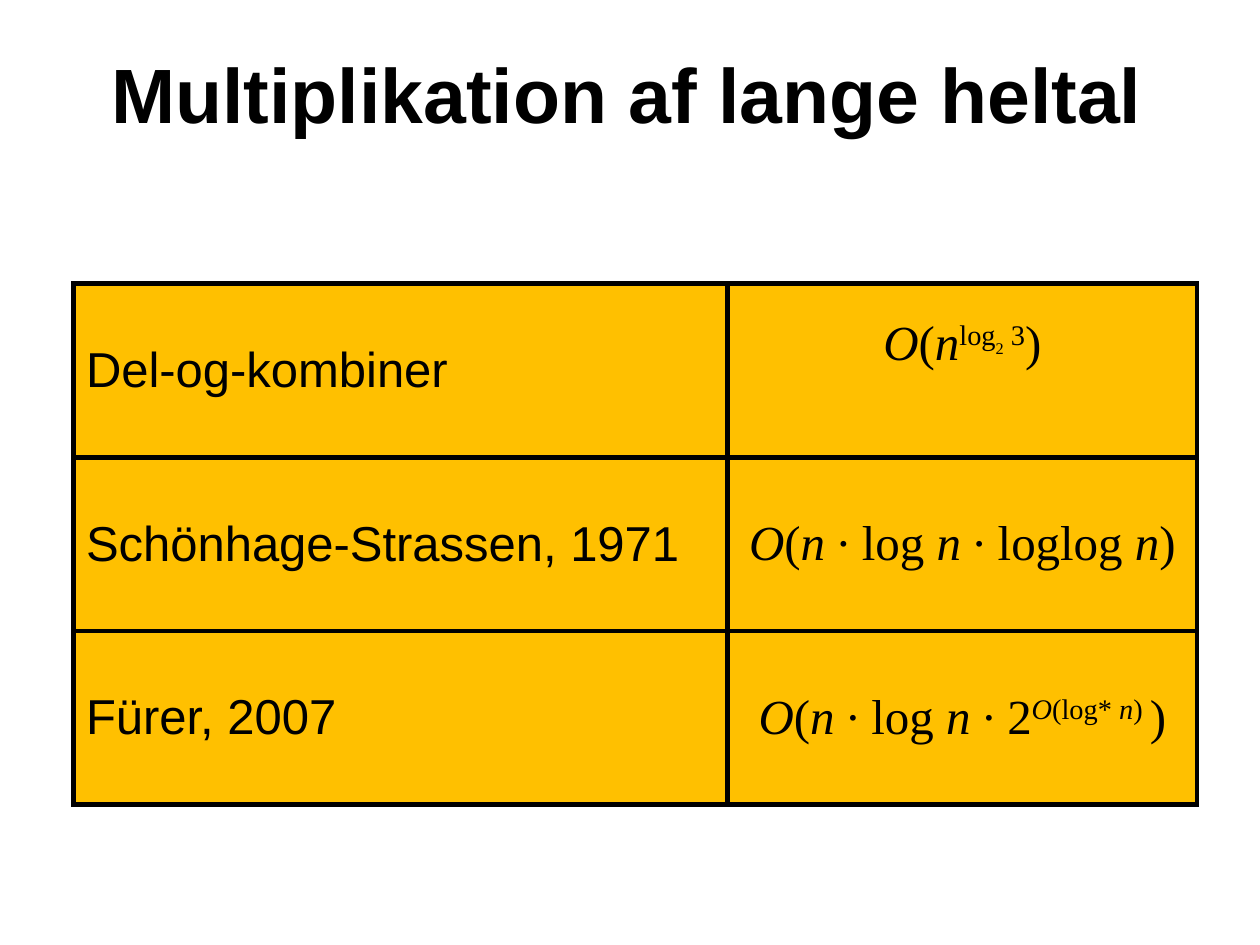
from lxml.etree import SubElement
from pptx import Presentation
from pptx.dml.color import RGBColor
from pptx.enum.text import MSO_ANCHOR as Anchor, PP_ALIGN as Align
from pptx.oxml.ns import qn
from pptx.util import Cm, Pt

BLACK, AMBER = "000000", "FFC000"
SANS, SERIF = "Arial", "Times New Roman"
BODY_SIZE, SUBSCRIPT_SIZE = 28, 16
BORDER_WIDTH = 3

# Each formula is a list of (text, italic, baseline shift in percent, size).
ROWS = [
    ("Del-og-kombiner", [
        ("O", True), ("(", False), ("n", True), ("log", False, 30),
        ("2", False, 20, SUBSCRIPT_SIZE), (" 3", False, 30), (")", False)]),
    ("Schönhage-Strassen, 1971", [
        ("O", True), ("(", False), ("n ", True), ("∙ log ", False),
        ("n ", True), ("∙ loglog ", False), ("n", True), (")", False)]),
    ("Fürer, 2007", [
        ("O", True), ("(", False), ("n ", True), ("∙ log ", False),
        ("n ", True), ("∙ 2", False), ("O", True, 30), ("(log* ", False, 30),
        ("n", True, 30), (") ", False, 30), (")", False)]),
]


def color(value):
    return RGBColor.from_string(value)


def style_paragraph(para, font_name, size, align, bold=False):
    para.alignment = align
    para.font.name = font_name
    para.font.size = Pt(size)
    para.font.bold = bold
    para.font.color.rgb = color(BLACK)


def add_span(para, text, italic, shift=0, size=BODY_SIZE):
    span = para.add_run()
    span.text = text
    span.font.italic = italic
    if size != BODY_SIZE:
        span.font.size = Pt(size)
    if shift:
        span.font._element.set("baseline", str(shift * 1000))


def style_cell(cell):
    """Border all four sides, then fill and centre vertically."""
    properties = cell._tc.get_or_add_tcPr()
    for side in ("a:lnL", "a:lnR", "a:lnT", "a:lnB"):
        line = SubElement(properties, qn(side), w=str(Pt(BORDER_WIDTH)))
        fill = SubElement(line, qn("a:solidFill"))
        SubElement(fill, qn("a:srgbClr"), val=BLACK)
    cell.fill.solid()
    cell.fill.fore_color.rgb = color(AMBER)
    cell.vertical_anchor = Anchor.MIDDLE


def add_title(page, left, top, width, height):
    box = page.shapes.add_textbox(left, top, width, height)
    frame = box.text_frame
    frame.word_wrap = True
    frame.vertical_anchor = Anchor.MIDDLE
    para = frame.paragraphs[0]
    para.text = "Multiplikation af lange heltal"
    style_paragraph(para, SANS, 44, Align.CENTER, bold=True)


def add_running_times(page, left, top, width, height):
    table = page.shapes.add_table(len(ROWS), 2, left, top, width, height).table
    table.first_row = table.horz_banding = False
    name_width = Cm(13.19)
    table.columns[0].width = name_width
    table.columns[1].width = width - name_width

    for index, (name, formula) in enumerate(ROWS):
        name_cell, formula_cell = table.cell(index, 0), table.cell(index, 1)
        style_cell(name_cell)
        style_cell(formula_cell)

        para = name_cell.text_frame.paragraphs[0]
        para.text = name
        style_paragraph(para, SANS, BODY_SIZE, Align.LEFT)

        para = formula_cell.text_frame.paragraphs[0]
        style_paragraph(para, SERIF, BODY_SIZE, Align.CENTER)
        for part in formula:
            add_span(para, *part)

    # The first formula sits above the middle of its cell.
    table.cell(0, 1).margin_bottom = Cm(1.22)


def main():
    deck = Presentation()
    deck.slide_width, deck.slide_height = Cm(25.4), Cm(19.05)
    page = deck.slides.add_slide(deck.slide_layouts[6])
    add_title(page, Cm(1.22), Cm(0.28), Cm(22.86), Cm(3.18))
    add_running_times(page, Cm(1.48), Cm(5.72), Cm(22.65), Cm(10.5))
    deck.save("out.pptx")


if __name__ == "__main__":
    main()
